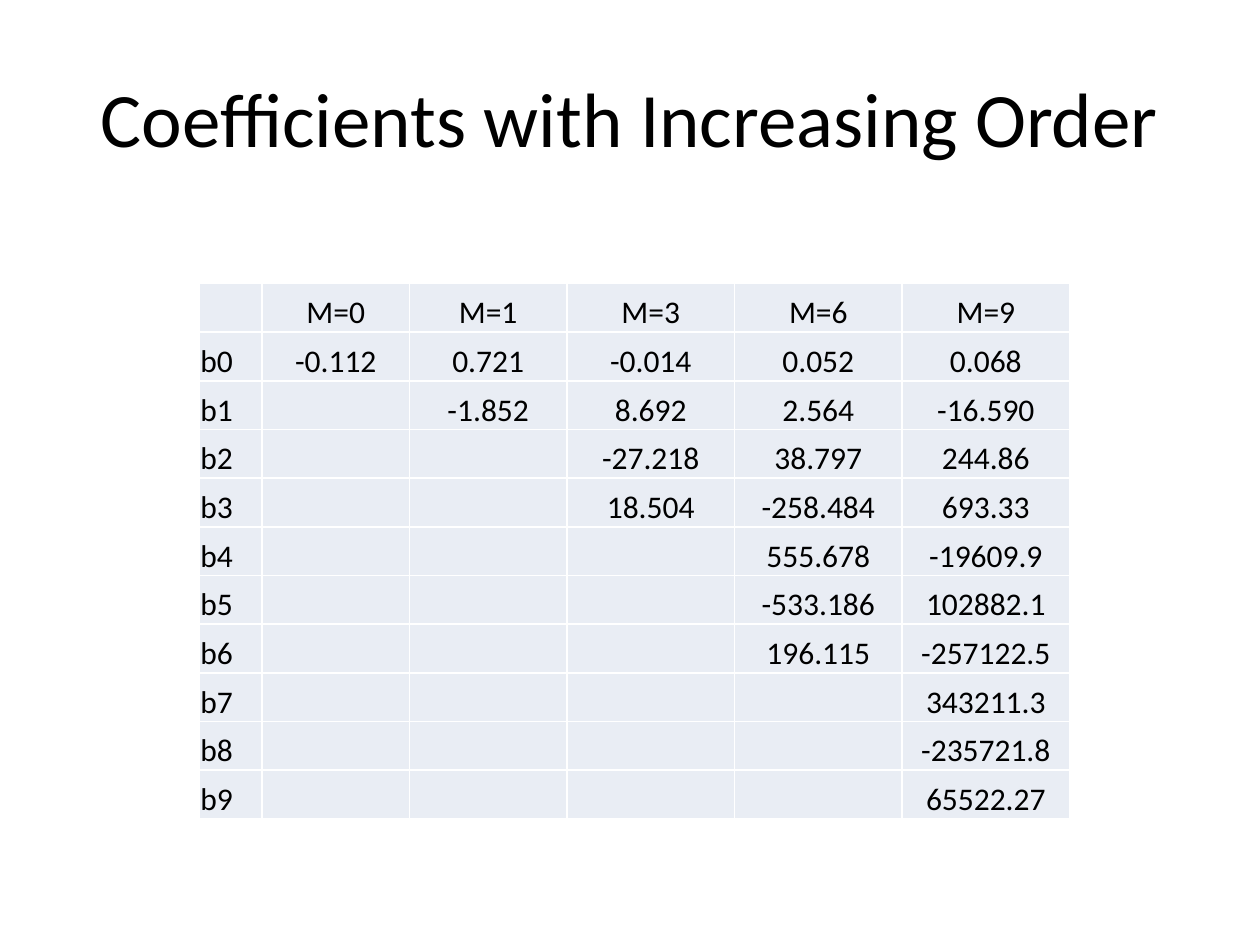
"""Build a slide with a table of polynomial coefficients by order."""
from lxml import etree
from pptx import Presentation
from pptx import util as u
from pptx.dml.color import RGBColor
from pptx.enum import text
from pptx.oxml import ns

TITLE = "Coefficients with Increasing Order"
COEFS = {
    "M=0": ["-0.112"],
    "M=1": ["0.721", "-1.852"],
    "M=3": ["-0.014", "8.692", "-27.218", "18.504"],
    "M=6": ["0.052", "2.564", "38.797", "-258.484", "555.678", "-533.186",
            "196.115"],
    "M=9": ["0.068", "-16.590", "244.86", "693.33", "-19609.9", "102882.1",
            "-257122.5", "343211.3", "-235721.8", "65522.27"],
}
COLORS = {"ink": "000000", "cell": "E9EDF4", "rule": "FFFFFF"}
FONT = "Calibri"
WIDTHS = [0.5, 1.17, 1.25, 1.33, 1.33, 1.33]
LEFT, TOP, HIGH = 1.58, 2.25, 4.25


def write(para, words, size, align):
    para.alignment = align
    run = para.add_run()
    run.text = words
    run.font.size = u.Pt(size)
    run.font.name = FONT
    run.font.color.rgb = RGBColor.from_string(COLORS["ink"])


def edge(cell):
    props = cell._tc.get_or_add_tcPr()
    for side in ("lnL", "lnR", "lnT", "lnB"):
        line = etree.SubElement(props, ns.qn("a:" + side), w=str(u.Pt(1)))
        fill = etree.SubElement(line, ns.qn("a:solidFill"))
        etree.SubElement(fill, ns.qn("a:srgbClr"), val=COLORS["rule"])


def dress(cell):
    cell.margin_left = cell.margin_right = cell.margin_top = u.Inches(0.01)
    cell.margin_bottom = 0
    cell.vertical_anchor = text.MSO_ANCHOR.BOTTOM
    edge(cell)
    cell.fill.solid()
    cell.fill.fore_color.rgb = RGBColor.from_string(COLORS["cell"])


def add_title(slide):
    title = slide.shapes.title
    title.left, title.top = u.Inches(0.5), u.Inches(0.3)
    title.width, title.height = u.Inches(9), u.Inches(1.25)
    frame = title.text_frame
    frame.vertical_anchor = text.MSO_ANCHOR.MIDDLE
    write(frame.paragraphs[0], TITLE, 44, text.PP_ALIGN.CENTER)


def add_grid(slide):
    count = max(map(len, COEFS.values()))
    cols = [[""] + [f"b{i}" for i in range(count)]]
    cols += [[head] + vals for head, vals in COEFS.items()]
    table = slide.shapes.add_table(
        count + 1, len(cols), u.Inches(LEFT), u.Inches(TOP),
        u.Inches(sum(WIDTHS)), u.Inches(HIGH)).table
    table.first_row = table.horz_banding = False
    for col, width in zip(table.columns, WIDTHS):
        col.width = u.Inches(width)
    for cell in table.iter_cells():
        dress(cell)
    for c, vals in enumerate(cols):
        align = text.PP_ALIGN.CENTER if c else text.PP_ALIGN.LEFT
        for r, words in enumerate(vals):
            if words:
                para = table.cell(r, c).text_frame.paragraphs[0]
                write(para, words, 18, align)


def main():
    deck = Presentation()
    deck.slide_width, deck.slide_height = u.Inches(10), u.Inches(7.5)
    slide = deck.slides.add_slide(deck.slide_layouts[5])
    add_title(slide)
    add_grid(slide)
    deck.save("out.pptx")


if __name__ == "__main__":
    main()
